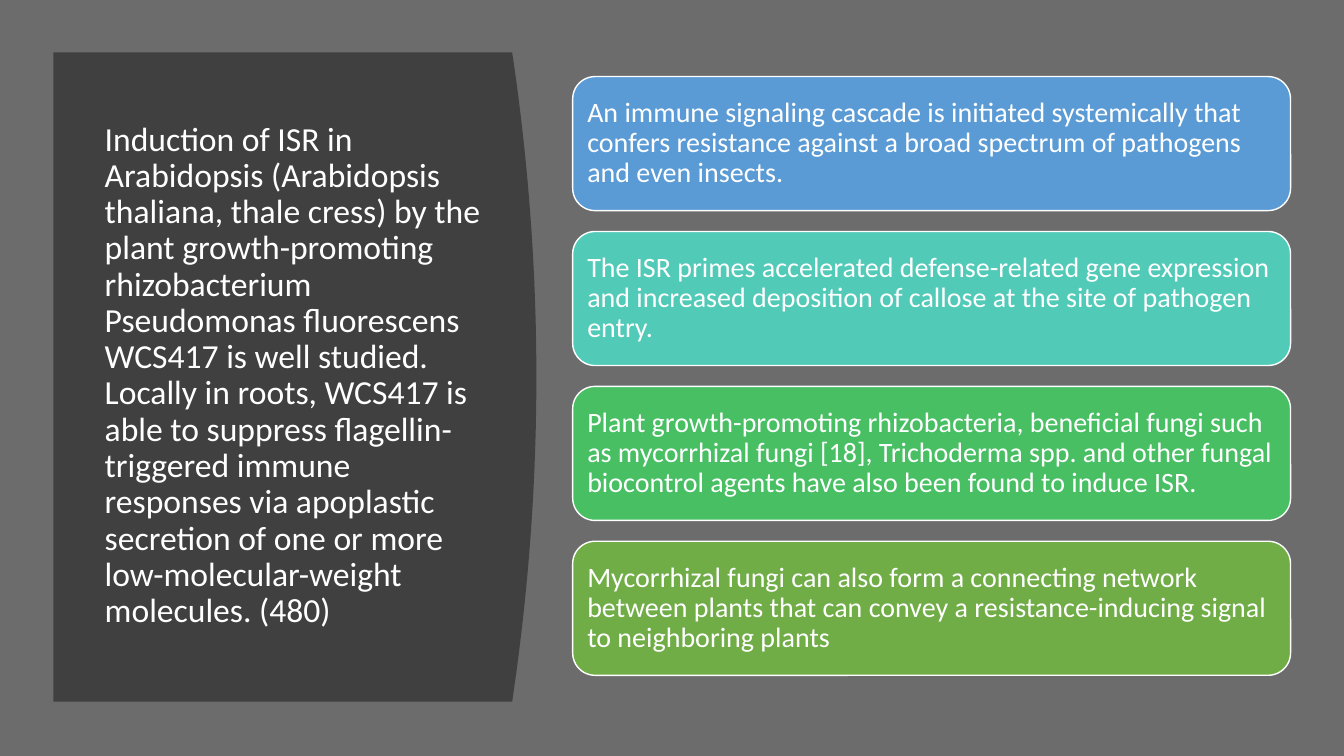
from pptx import Presentation
from pptx.dml.color import RGBColor
from pptx.enum.shapes import MSO_SHAPE
from pptx.enum.text import MSO_ANCHOR, PP_ALIGN
from pptx.util import Inches, Pt

WHITE = RGBColor(0xFF, 0xFF, 0xFF)
GREY = RGBColor(0x6C, 0x6C, 0x6C)
CHARCOAL = RGBColor(0x40, 0x40, 0x40)
BLUE = RGBColor(0x5B, 0x9B, 0xD5)
TEAL = RGBColor(0x52, 0xCA, 0xB8)
GREEN = RGBColor(0x49, 0xBF, 0x64)
OLIVE = RGBColor(0x70, 0xAD, 0x47)

TITLE = (
    "Induction of ISR in Arabidopsis (Arabidopsis thaliana, thale cress) by the "
    "plant growth-promoting rhizobacterium Pseudomonas fluorescens WCS417 is well "
    "studied. Locally in roots, WCS417 is able to suppress flagellin-triggered "
    "immune responses via apoplastic secretion of one or more "
    "low-molecular-weight molecules. (480)"
)
CARDS = [
    (BLUE, "An immune signaling cascade is initiated systemically that confers "
           "resistance against a broad spectrum of pathogens and even insects."),
    (TEAL, "The ISR primes accelerated defense-related gene expression and "
           "increased deposition of callose at the site of pathogen entry."),
    (GREEN, "Plant growth-promoting rhizobacteria, beneficial fungi such as "
            "mycorrhizal fungi [18], Trichoderma spp. and other fungal biocontrol "
            "agents have also been found to induce ISR."),
    (OLIVE, "Mycorrhizal fungi can also form a connecting network between plants "
            "that can convey a resistance-inducing signal to neighboring plants"),
]


def write_text(shape, text, size, side_margin, end_margin):
    frame = shape.text_frame
    frame_format = {
        "word_wrap": True,
        "vertical_anchor": MSO_ANCHOR.MIDDLE,
        "margin_left": Inches(side_margin),
        "margin_right": Inches(side_margin),
        "margin_top": Inches(end_margin),
        "margin_bottom": Inches(end_margin),
    }
    for name, value in frame_format.items():
        setattr(frame, name, value)
    para = frame.paragraphs[0]
    para.alignment = PP_ALIGN.LEFT
    para.line_spacing = 0.9
    span = para.add_run()
    span.text = text
    for name, value in {"name": "Calibri", "size": Pt(size)}.items():
        setattr(span.font, name, value)
    span.font.color.rgb = WHITE


deck = Presentation()
deck.slide_width = Inches(13.33)
deck.slide_height = Inches(7.5)
page = deck.slides.add_slide(deck.slide_layouts[6])
page.background.fill.solid()
page.background.fill.fore_color.rgb = GREY

panel_left, panel_top, panel_bottom = 0.53, 0.52, 6.96
edge_right, bulge, steps = 5.08, 0.24, 40
edge = []
for step in range(steps + 1):
    share = step / steps
    x = edge_right + bulge * (1 - (2 * share - 1) ** 2)
    y = panel_top + (panel_bottom - panel_top) * share
    edge.append((Inches(x), Inches(y)))
outline = page.shapes.build_freeform(Inches(panel_left), Inches(panel_top))
outline.add_line_segments(edge + [(Inches(panel_left), Inches(panel_bottom))], close=True)
panel = outline.convert_to_shape()
panel.shadow.inherit = False
panel.fill.solid()
panel.fill.fore_color.rgb = CHARCOAL
panel.line.fill.background()

title_box = page.shapes.add_textbox(Inches(0.94), Inches(1.11), Inches(4.01), Inches(5.24))
write_text(title_box, TITLE, 24, 0.1, 0.05)

first_top, last_top = 0.76, 5.37
pitch = (last_top - first_top) / (len(CARDS) - 1)
for index, (color, text) in enumerate(CARDS):
    card = page.shapes.add_shape(
        MSO_SHAPE.ROUNDED_RECTANGLE,
        Inches(5.68), Inches(first_top + index * pitch), Inches(7.12), Inches(1.33),
    )
    card.shadow.inherit = False
    card.fill.solid()
    card.fill.fore_color.rgb = color
    card.line.color.rgb = WHITE
    card.line.width = Pt(1)
    write_text(card, text, 20, 0.08, 0.08)

deck.save("out.pptx")
